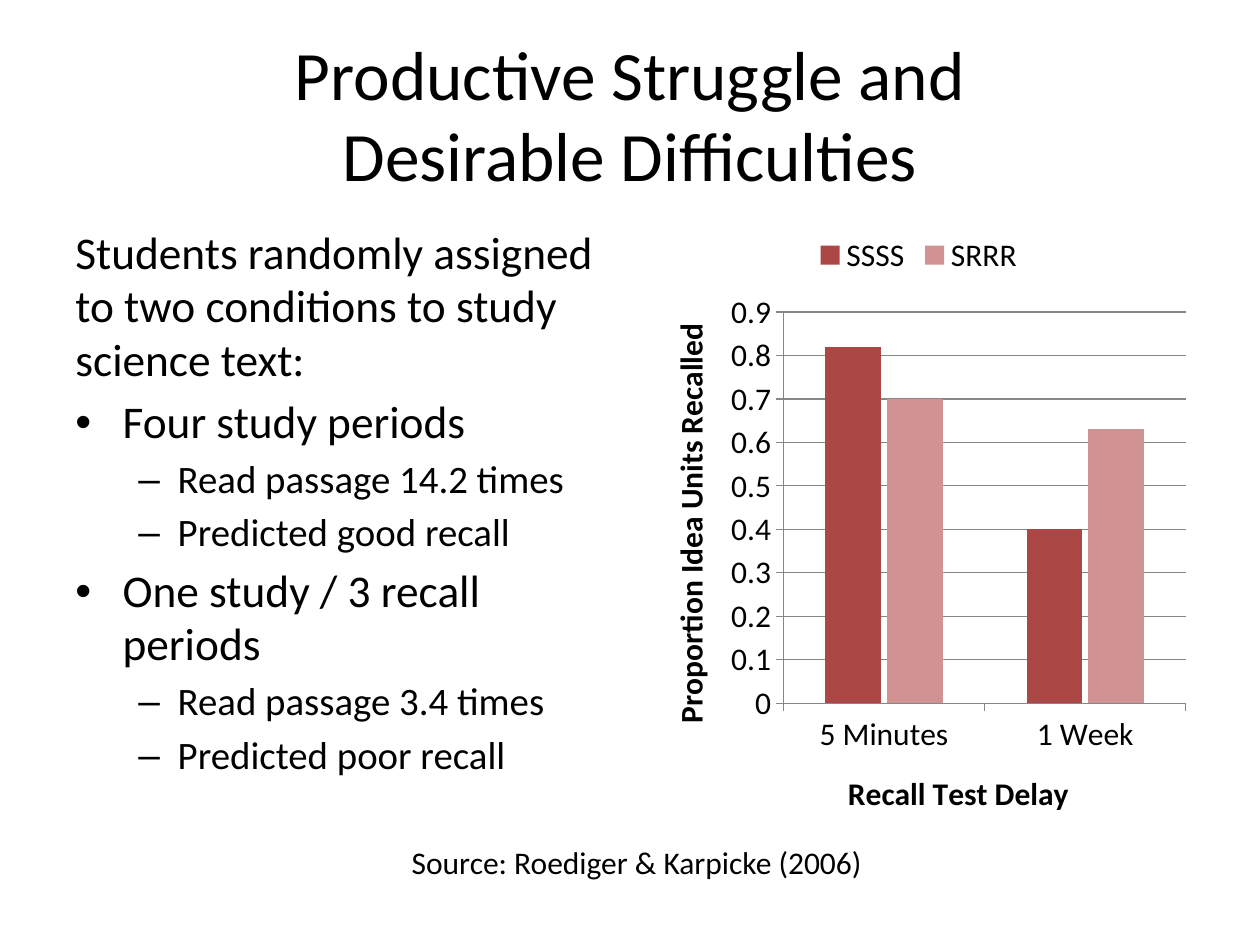
"""Build a slide comparing repeated study with repeated recall."""
from dataclasses import dataclass

from lxml import etree
from pptx import Presentation
from pptx import util as u
from pptx.chart.data import CategoryChartData
from pptx.dml.color import RGBColor
from pptx.enum import chart as c
from pptx.enum import text as t
from pptx.oxml.ns import qn


@dataclass(frozen=True)
class Theme:
    font: str = "Calibri"
    ink: str = "000000"
    grid: str = "878787"
    series: tuple = ("AB4744", "D19392")
    title: float = 39.6
    body: float = 25.9
    detail: float = 22.2
    small: float = 18


THEME = Theme()
TITLE = "Productive Struggle and\vDesirable Difficulties"
BODY = [
    ("intro", "Students randomly assigned to two conditions to study science text:"),
    ("point", "Four study periods"),
    ("detail", "Read passage 14.2 times"),
    ("detail", "Predicted good recall"),
    ("point", "One study / 3 recall periods"),
    ("detail", "Read passage 3.4 times"),
    ("detail", "Predicted poor recall"),
]
STYLES = {
    "intro": (0, THEME.body, 0, 0, None),
    "point": (0, THEME.body, 27, -27, "•"),
    "detail": (1, THEME.detail, 58.5, -22.5, "–"),
}
DELAYS = ["5 Minutes", "1 Week"]
RECALL = {"SSSS": (0.82, 0.4), "SRRR": (0.7, 0.63)}
DELAY_TITLE = "Recall Test Delay"
RECALL_TITLE = "Proportion Idea Units Recalled"
SOURCE = "Source: Roediger & Karpicke (2006)"

MARGIN, COLUMN_TOP, COLUMN_WIDTH, COLUMN_HEIGHT = 36, 126, 318, 356.4
SLIDE_WIDTH, SLIDE_HEIGHT = 720, 540


def box(left, top, width, height):
    return [u.Pt(value) for value in (left, top, width, height)]


def style_font(font, size, bold=False):
    font.name, font.size, font.bold = THEME.font, u.Pt(size), bold
    font.color.rgb = RGBColor.from_string(THEME.ink)


def style_paragraph(paragraph, size):
    for run in paragraph.runs:
        style_font(run.font, size)


def add_title(slide):
    shape = slide.shapes.title
    shape.left, shape.top, shape.width, shape.height = box(MARGIN, 21.6, 648, 90)
    frame = shape.text_frame
    frame.text = TITLE
    frame.auto_size = t.MSO_AUTO_SIZE.NONE
    frame.vertical_anchor = t.MSO_ANCHOR.MIDDLE
    paragraph = frame.paragraphs[0]
    paragraph.alignment = t.PP_ALIGN.CENTER
    paragraph.line_spacing = 0.98
    style_paragraph(paragraph, THEME.title)


def add_body(slide):
    shape = slide.shapes.add_textbox(*box(MARGIN, COLUMN_TOP, COLUMN_WIDTH, COLUMN_HEIGHT))
    frame = shape.text_frame
    frame.word_wrap = True
    for index, (kind, line) in enumerate(BODY):
        level, size, margin, indent, bullet = STYLES[kind]
        paragraph = frame.add_paragraph() if index else frame.paragraphs[0]
        paragraph.text = line
        paragraph.level = level
        paragraph.space_before = u.Pt(round(size * 0.2, 1))
        paragraph.line_spacing = 0.98
        style_paragraph(paragraph, size)
        if bullet:
            properties = paragraph._p.get_or_add_pPr()
            properties.set("marL", str(u.Pt(margin)))
            properties.set("indent", str(u.Pt(indent)))
            etree.SubElement(properties, qn("a:buFont")).set("typeface", "Arial")
            etree.SubElement(properties, qn("a:buChar")).set("char", bullet)


def style_axis(axis, title):
    frame = axis.axis_title.text_frame
    frame.text = title
    style_font(frame.paragraphs[0].runs[0].font, THEME.small, bold=True)
    style_font(axis.tick_labels.font, THEME.small)
    axis.major_tick_mark = c.XL_TICK_MARK.OUTSIDE
    axis.minor_tick_mark = c.XL_TICK_MARK.NONE
    style_line(axis.format.line)


def style_line(line):
    line.color.rgb = RGBColor.from_string(THEME.grid)
    line.width = u.Pt(0.75)


def add_recall_chart(slide):
    data = CategoryChartData()
    data.categories = DELAYS
    for name, values in RECALL.items():
        data.add_series(name, values)
    left = SLIDE_WIDTH - MARGIN - COLUMN_WIDTH
    chart = slide.shapes.add_chart(
        c.XL_CHART_TYPE.COLUMN_CLUSTERED,
        *box(left, COLUMN_TOP, COLUMN_WIDTH, COLUMN_HEIGHT), data).chart
    style_font(chart.font, THEME.small)
    chart.has_title = False
    chart.has_legend = True
    chart.legend.position = c.XL_LEGEND_POSITION.TOP
    chart.legend.include_in_layout = False
    style_font(chart.legend.font, THEME.small)

    plot = chart.plots[0]
    plot.gap_width, plot.overlap, plot.vary_by_categories = 150, -10, False
    for series, color in zip(plot.series, THEME.series):
        series.format.fill.solid()
        series.format.fill.fore_color.rgb = RGBColor.from_string(color)

    style_axis(chart.category_axis, DELAY_TITLE)
    axis = chart.value_axis
    style_axis(axis, RECALL_TITLE)
    axis.minimum_scale, axis.maximum_scale, axis.major_unit = 0, 0.9, 0.1
    axis.has_major_gridlines = True
    style_line(axis.major_gridlines.format.line)


def add_source(slide):
    shape = slide.shapes.add_textbox(*box(228.2, 478.1, 275.8, 28.8))
    frame = shape.text_frame
    frame.text = SOURCE
    frame.word_wrap = False
    frame.auto_size = t.MSO_AUTO_SIZE.SHAPE_TO_FIT_TEXT
    style_paragraph(frame.paragraphs[0], THEME.small)


def main():
    presentation = Presentation()
    presentation.slide_width = u.Pt(SLIDE_WIDTH)
    presentation.slide_height = u.Pt(SLIDE_HEIGHT)
    slide = presentation.slides.add_slide(presentation.slide_layouts.get_by_name("Title Only"))
    add_title(slide)
    add_body(slide)
    add_recall_chart(slide)
    add_source(slide)
    presentation.save("out.pptx")


if __name__ == "__main__":
    main()
